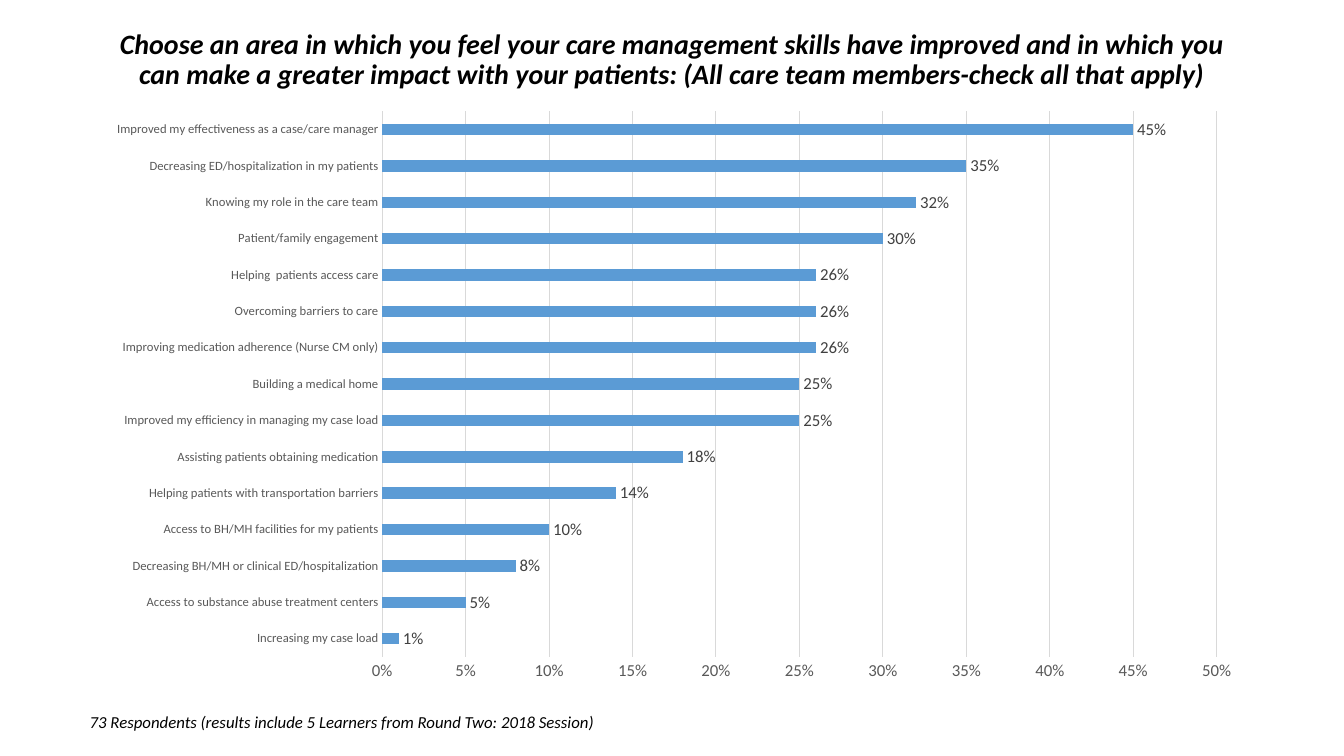
from dataclasses import dataclass

from lxml.etree import SubElement
from pptx import Presentation
from pptx.chart.data import CategoryChartData
from pptx.dml.color import RGBColor
from pptx.enum.chart import XL_CHART_TYPE, XL_LABEL_POSITION, XL_TICK_MARK
from pptx.enum.text import MSO_ANCHOR, MSO_AUTO_SIZE, PP_ALIGN
from pptx.oxml.ns import qn
from pptx.util import Cm, Pt

# Content
QUESTION = (
    "Choose an area in which you feel your care management skills have improved "
    "and in which you can make a greater impact with your patients: "
    "(All care team members-check all that apply)"
)
RESPONDENTS = "73 Respondents (results include 5 Learners from Round Two: 2018 Session)"
SKILL_AREAS = [  # from the bottom bar to the top bar
    ("Increasing my case load", 0.01),
    ("Access to substance abuse treatment centers", 0.05),
    ("Decreasing BH/MH or clinical ED/hospitalization", 0.08),
    ("Access to BH/MH facilities for my patients", 0.10),
    ("Helping patients with transportation barriers", 0.14),
    ("Assisting patients obtaining medication", 0.18),
    ("Improved my efficiency in managing my case load", 0.25),
    ("Building a medical home", 0.25),
    ("Improving medication adherence (Nurse CM only)", 0.26),
    ("Overcoming barriers to care", 0.26),
    ("Helping  patients access care", 0.26),
    ("Patient/family engagement", 0.30),
    ("Knowing my role in the care team", 0.32),
    ("Decreasing ED/hospitalization in my patients", 0.35),
    ("Improved my effectiveness as a case/care manager", 0.45),
]


@dataclass(frozen=True)
class Theme:
    font: str = "Calibri"
    ink: str = "000000"
    label: str = "404040"
    axis: str = "595959"
    grid: str = "D9D9D9"
    bar: str = "5B9BD5"
    title_size: float = 20
    text_size: float = 12
    area_size: float = 9
    line_width: float = 0.75


THEME = Theme()

# Layout: left, top, width, height
QUESTION_BOX = [Cm(v) for v in (2.33, 0.53, 29.21, 1.98)]
CHART_BOX = [Cm(v) for v in (2.33, 2.51, 29.21, 14.94)]
RESPONDENTS_BOX = [Cm(v) for v in (2.01, 17.81, 13.74, 0.76)]
PLOT_SHARE = {"x": 0.25, "y": 0.02, "w": 0.72, "h": 0.92}


def style_font(font, size, color, bold=False, italic=False):
    font.name, font.size = THEME.font, Pt(size)
    font.bold, font.italic = bold, italic
    font.color.rgb = RGBColor.from_string(color)


def write_text(frame, text, size, color=THEME.ink, bold=False, italic=False,
               align=PP_ALIGN.LEFT, anchor=MSO_ANCHOR.TOP, spacing=1.0):
    frame.word_wrap = True
    frame.vertical_anchor = anchor
    paragraph = frame.paragraphs[0]
    paragraph.alignment, paragraph.line_spacing = align, spacing
    run = paragraph.add_run()
    run.text = text
    style_font(run.font, size, color, bold, italic)


def style_line(line):
    line.color.rgb = RGBColor.from_string(THEME.grid)
    line.width = Pt(THEME.line_width)


def place_plot(chart, shares):
    plot_area = chart._chartSpace.chart.plotArea
    for old in plot_area.findall(qn("c:layout")):
        plot_area.remove(old)
    layout = SubElement(plot_area, qn("c:layout"))
    plot_area.insert(0, layout)
    manual = SubElement(layout, qn("c:manualLayout"))
    settings = {"layoutTarget": "inner", "xMode": "edge", "yMode": "edge", **shares}
    for tag, value in settings.items():
        SubElement(manual, qn(f"c:{tag}")).set("val", str(value))


def add_skill_chart(slide):
    data = CategoryChartData(number_format="0%")
    data.categories = [area for area, _ in SKILL_AREAS]
    data.add_series("Series 1", [share for _, share in SKILL_AREAS])
    chart = slide.shapes.add_chart(XL_CHART_TYPE.BAR_CLUSTERED, *CHART_BOX, data).chart
    chart.has_legend = chart.has_title = False
    style_font(chart.font, 10, THEME.ink)
    place_plot(chart, PLOT_SHARE)

    # Bars and their values
    bars = chart.plots[0]
    bars.gap_width, bars.vary_by_categories = 219, False
    fill = bars.series[0].format.fill
    fill.solid()
    fill.fore_color.rgb = RGBColor.from_string(THEME.bar)
    bars.has_data_labels = True
    labels = bars.data_labels
    labels.show_value = True
    labels.position = XL_LABEL_POSITION.OUTSIDE_END
    labels.number_format, labels.number_format_is_linked = "0%", False
    style_font(labels.font, THEME.text_size, THEME.label)

    # Axes
    areas, shares = chart.category_axis, chart.value_axis
    for axis, size in ((areas, THEME.area_size), (shares, THEME.text_size)):
        axis.major_tick_mark = axis.minor_tick_mark = XL_TICK_MARK.NONE
        style_font(axis.tick_labels.font, size, THEME.axis)
    areas.has_major_gridlines = False
    style_line(areas.format.line)
    shares.minimum_scale, shares.maximum_scale, shares.major_unit = 0, 0.5, 0.05
    shares.tick_labels.number_format = "0%"
    shares.tick_labels.number_format_is_linked = False
    shares.format.line.fill.background()
    shares.has_major_gridlines = True
    style_line(shares.major_gridlines.format.line)


def main():
    deck = Presentation()
    deck.slide_width, deck.slide_height = Cm(33.87), Cm(19.05)
    slide = deck.slides.add_slide(deck.slide_layouts[5])

    # Question
    question = slide.shapes.title
    question.left, question.top, question.width, question.height = QUESTION_BOX
    question.text_frame.auto_size = MSO_AUTO_SIZE.NONE
    write_text(question.text_frame, QUESTION, THEME.title_size, bold=True, italic=True,
               align=PP_ALIGN.CENTER, anchor=MSO_ANCHOR.MIDDLE, spacing=0.9)

    # Answers
    add_skill_chart(slide)

    # Respondents
    respondents = slide.shapes.add_textbox(*RESPONDENTS_BOX)
    respondents.text_frame.auto_size = MSO_AUTO_SIZE.SHAPE_TO_FIT_TEXT
    write_text(respondents.text_frame, RESPONDENTS, THEME.text_size, italic=True)

    deck.save("out.pptx")


if __name__ == "__main__":
    main()
